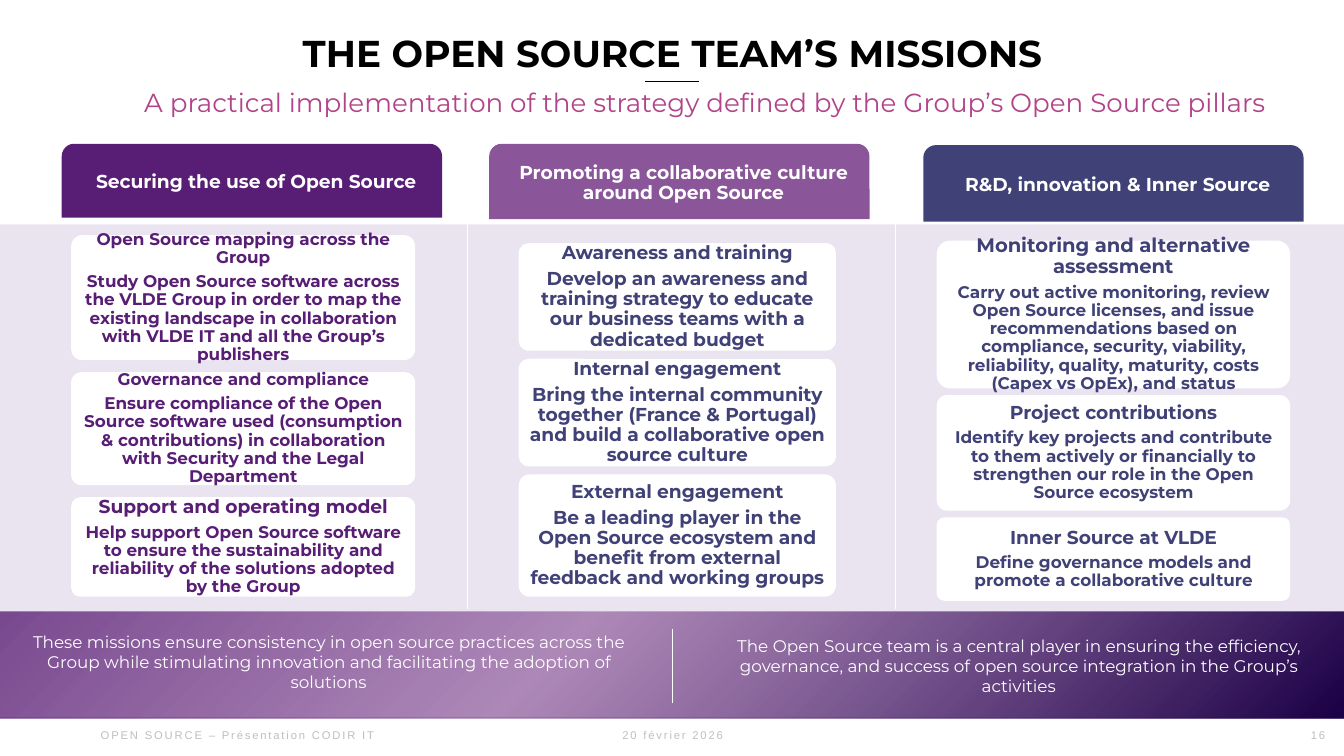
"""Build the slide on the missions of the Open Source team."""
import pptx
import pptx.dml.color
import pptx.enum.dml
import pptx.enum.shapes
import pptx.enum.text
import pptx.oxml
import pptx.oxml.ns
import pptx.util

WIDTH = 10
HEIGHT = WIDTH * 9 / 16
BLACK, WHITE, GREY, PINK = "000000", "FFFFFF", "BFBFBF", "B24388"
VIOLET, MAUVE, INDIGO, LAVENDER = "581D74", "8A5599", "404176", "E9E4F0"

TITLE = "THE OPEN SOURCE TEAM’S MISSIONS"
SUBTITLE = "A practical implementation of the strategy defined by the Group’s Open Source pillars"
MISSIONS = [
    {"heading": "Securing the use of Open Source", "fill": VIOLET, "ink": VIOLET,
     "header": (0.46, 1.07, 2.83, 0.55), "left": 0.53, "width": 2.56, "top": 1.75, "gap": 0.09,
     "cards": [
         (0.93, "Open Source mapping across the Group", 9,
          "Study Open Source software across the VLDE Group in order to map the existing landscape "
          "in collaboration with VLDE IT and all the Group’s publishers", 9),
         (0.84, "Governance and compliance", 9,
          "Ensure compliance of the Open Source software used (consumption & contributions) "
          "in collaboration with Security and the Legal Department", 9),
         (0.74, "Support and operating model", 10,
          "Help support Open Source software to ensure the sustainability and reliability "
          "of the solutions adopted by the Group", 9)]},
    {"heading": "Promoting a collaborative culture around Open Source", "fill": MAUVE, "ink": INDIGO,
     "header": (3.64, 1.07, 2.83, 0.56), "left": 3.86, "width": 2.36, "top": 1.81, "gap": 0.06,
     "cards": [
         (0.8, "Awareness and training", 10,
          "Develop an awareness and training strategy to educate our business teams "
          "with a dedicated budget", 10),
         (0.8, "Internal engagement", 10,
          "Bring the internal community together (France & Portugal) and build a collaborative "
          "open source culture", 10),
         (0.91, "External engagement", 10,
          "Be a leading player in the Open Source ecosystem and benefit from external feedback "
          "and working groups", 10)]},
    {"heading": "R&D, innovation & Inner Source", "fill": INDIGO, "ink": INDIGO,
     "header": (6.87, 1.08, 2.83, 0.57), "left": 6.97, "width": 2.63, "top": 1.79, "gap": 0.05,
     "cards": [
         (1.1, "Monitoring and alternative assessment", 10.5,
          "Carry out active monitoring, review Open Source licenses, and issue recommendations "
          "based on compliance, security, viability, reliability, quality, maturity, costs "
          "(Capex vs OpEx), and status", 9),
         (0.86, "Project contributions", 10,
          "Identify key projects and contribute to them actively or financially to strengthen "
          "our role in the Open Source ecosystem", 9),
         (0.62, "Inner Source at VLDE", 10,
          "Define governance models and promote a collaborative culture", 9)]},
]
CONCLUSIONS = [
    ((0, 4.65, 4.89, 0.56),
     "These missions ensure consistency in open source practices across the Group while "
     "stimulating innovation and facilitating the adoption of solutions"),
    ((5.25, 4.68, 4.66, 0.56),
     "The Open Source team is a central player in ensuring the efficiency, governance, and "
     "success of open source integration in the Group’s activities"),
]
FOOTERS = [
    ((9.65, 5.42, 0.21, 0.1), "16", "RIGHT", False),
    ((0.75, 5.42, 3.17, 0.1), "OPEN SOURCE – Présentation CODIR IT", "LEFT", True),
    ((4.62, 5.42, 0.77, 0.1), "20 février 2026", "CENTER", False),
]
BAND_STOPS = [(0, "1A0046", 100), (58, MAUVE, 69), (100, VIOLET, 81)]


def inches(lengths):
    return [pptx.util.Inches(length) for length in lengths]


def color(value):
    return pptx.dml.color.RGBColor.from_string(value)


def element(xml):
    return pptx.oxml.parse_xml(xml.replace(">", f" {pptx.oxml.ns.nsdecls('a')}>", 1))


def set_frame(frame, insets=None, anchor=None, wrap=True):
    frame.word_wrap = wrap
    if insets is not None:
        (frame.margin_left, frame.margin_top,
         frame.margin_right, frame.margin_bottom) = inches(insets)
    if anchor:
        frame.vertical_anchor = pptx.enum.text.MSO_ANCHOR[anchor]


def write(paragraph, text, size, ink, bold=False, align="CENTER",
          leading=None, after=0, font="Montserrat"):
    paragraph.text = text
    paragraph.alignment = pptx.enum.text.PP_ALIGN[align]
    paragraph.space_before = pptx.util.Pt(0)
    paragraph.space_after = pptx.util.Pt(after)
    if leading:
        paragraph.line_spacing = leading
    for run in paragraph.runs:
        run.font.name, run.font.size, run.font.bold = font, pptx.util.Pt(size), bold
        run.font.color.rgb = color(ink)


def add_block(slide, preset, box, fill=None):
    block = slide.shapes.add_shape(pptx.enum.shapes.MSO_SHAPE[preset], *inches(box))
    block.shadow.inherit = False
    block.line.fill.background()
    if fill:
        block.fill.solid()
        block.fill.fore_color.rgb = color(fill)
    return block


def add_rule(slide, start, end, ink, weight, dash=None):
    rule = slide.shapes.add_connector(
        pptx.enum.shapes.MSO_CONNECTOR.STRAIGHT, *inches(start + end))
    rule.line.color.rgb = color(ink)
    rule.line.width = pptx.util.Pt(weight)
    if dash:
        rule.line.dash_style = pptx.enum.dml.MSO_LINE[dash]
    rule._element.spPr.append(element("<a:effectLst></a:effectLst>"))


def add_band(slide):
    band = add_block(slide, "RECTANGLE", (0, 4.42, WIDTH, 0.93))
    stops = "".join(
        f'<a:gs pos="{place * 1000}"><a:srgbClr val="{value}">'
        f'<a:alpha val="{opacity * 1000}"/></a:srgbClr></a:gs>'
        for place, value, opacity in BAND_STOPS)
    gradient = element(
        f'<a:gradFill rotWithShape="1"><a:gsLst>{stops}</a:gsLst><a:path path="circle">'
        '<a:fillToRect l="100000" t="100000"/></a:path>'
        '<a:tileRect r="-100000" b="-100000"/></a:gradFill>')
    band._element.spPr.find(pptx.oxml.ns.qn("a:prstGeom")).addnext(gradient)


def add_footer(slide, box, text, align, wrap):
    footer = slide.shapes.add_textbox(*inches(box)).text_frame
    set_frame(footer, (0, 0, 0, 0), wrap=wrap)
    write(footer.paragraphs[0], text, 6, GREY, align=align, font="Arial")
    for run in footer.paragraphs[0].runs:
        run.font._element.set("spc", "100")


def add_heading(holder, box, text, size, ink, bold, insets):
    holder.left, holder.top, holder.width, holder.height = inches(box)
    frame = holder.text_frame
    set_frame(frame, insets, "TOP")
    frame.auto_size = pptx.enum.text.MSO_AUTO_SIZE.NONE
    properties = frame.paragraphs[0]._p.get_or_add_pPr()
    properties.set("marL", "0")
    properties.set("indent", "0")
    properties.append(element("<a:buNone></a:buNone>"))
    write(frame.paragraphs[0], text, size, ink, bold, leading=0.9)


def add_mission(slide, mission):
    header = add_block(slide, "ROUND_2_SAME_RECTANGLE", mission["header"], mission["fill"])
    set_frame(header.text_frame, (0.16, 0.05, 0.1, 0.05), "MIDDLE")
    write(header.text_frame.paragraphs[0], mission["heading"], 10, WHITE, True, leading=0.9)
    top = mission["top"]
    for height, name, name_size, detail, detail_size in mission["cards"]:
        card = add_block(slide, "ROUNDED_RECTANGLE",
                         (mission["left"], top, mission["width"], height), WHITE)
        card.adjustments[0] = 0.09
        frame = card.text_frame
        set_frame(frame, (0.04,) * 4, "MIDDLE")
        write(frame.paragraphs[0], name, name_size, mission["ink"], True, leading=0.9, after=3)
        write(frame.add_paragraph(), detail, detail_size, mission["ink"], True,
              leading=0.9, after=3)
        top += height + mission["gap"]


def main():
    deck = pptx.Presentation()
    deck.slide_width, deck.slide_height = inches((WIDTH, HEIGHT))
    slide = deck.slides.add_slide(deck.slide_layouts[1])
    add_rule(slide, (0, 5.34), (WIDTH, 5.34), GREY, 0.5)
    for footer in FOOTERS:
        add_footer(slide, *footer)
    add_rule(slide, (4.8, 0.61), (5.2, 0.61), BLACK, 0.5)
    add_band(slide)
    add_block(slide, "RECTANGLE", (0, 1.67, WIDTH, 2.88), LAVENDER)
    add_heading(slide.shapes.title, (0.79, 0.21, 8.43, 0.37), TITLE, 20, BLACK, True,
                (0.1, 0.05, 0.1, 0.05))
    add_heading(slide.placeholders[1], (0.79, 0.67, 8.92, 0.31), SUBTITLE, 14, PINK, False,
                (0, 0, 0, 0))
    for x in (3.48, 6.66):
        add_rule(slide, (x, 1.65), (x, 4.53), WHITE, 0.5)
    for mission in MISSIONS:
        add_mission(slide, mission)
    for box, text in CONCLUSIONS:
        conclusion = slide.shapes.add_textbox(*inches(box)).text_frame
        set_frame(conclusion)
        write(conclusion.paragraphs[0], text, 9, WHITE)
    add_rule(slide, (5, 4.68), (5, 5.23), WHITE, 0.25, "ROUND_DOT")
    deck.save("out.pptx")


if __name__ == "__main__":
    main()
